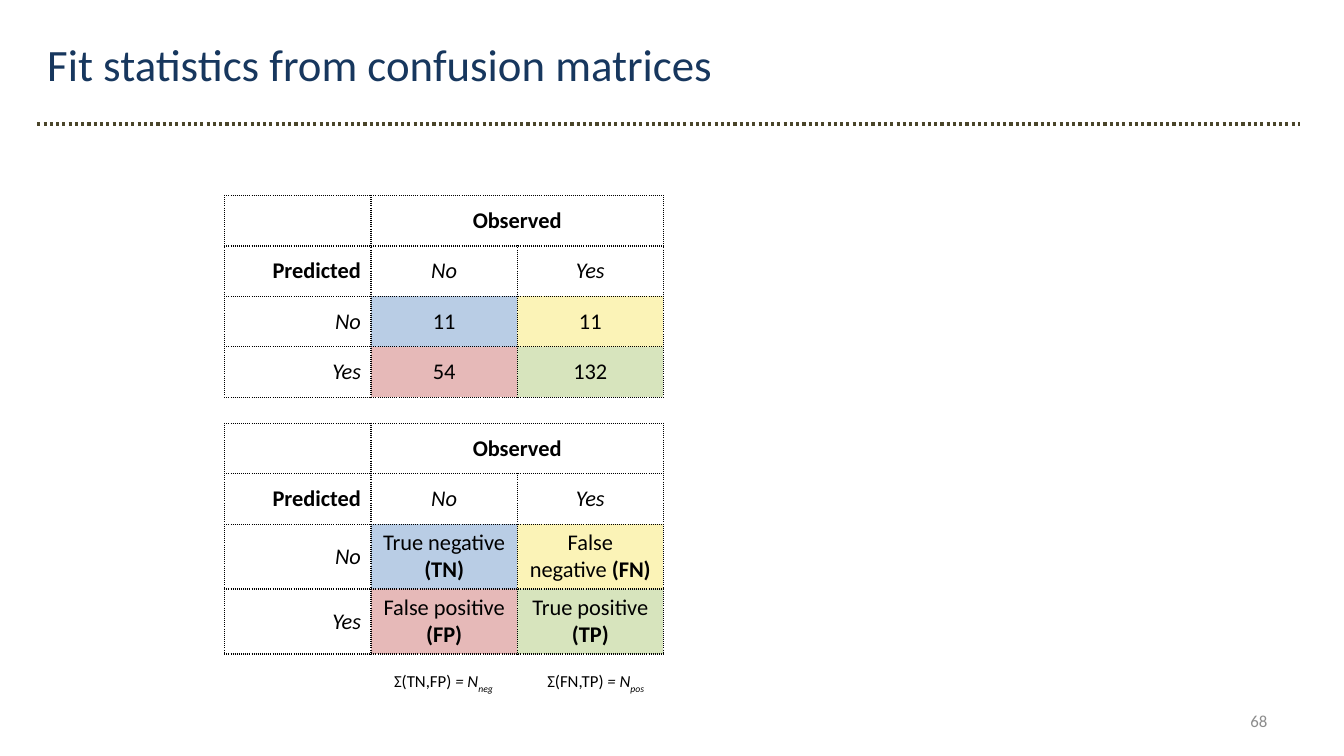
from dataclasses import dataclass

from lxml.etree import SubElement
from pptx import Presentation
from pptx.dml.color import RGBColor
from pptx.enum.dml import MSO_LINE
from pptx.enum.shapes import MSO_CONNECTOR
from pptx.enum.text import MSO_ANCHOR, MSO_AUTO_SIZE, PP_ALIGN
from pptx.oxml.ns import qn
from pptx.util import Pt

PX = 9144  # EMU per px, 100 px to the inch


@dataclass(frozen=True)
class Theme:
    font: str = "Calibri"
    title: str = "17375E"
    rule: str = "4A452A"
    text: str = "000000"
    page: str = "8C8C8C"
    true_negative: str = "B9CDE5"
    false_negative: str = "FBF3B7"
    false_positive: str = "E6B9B8"
    true_positive: str = "D7E4BD"
    title_size: int = 32
    table_size: int = 16
    note_size: int = 12


THEME = Theme()
OUTCOME_FILLS = {
    (2, 1): THEME.true_negative,
    (2, 2): THEME.false_negative,
    (3, 1): THEME.false_positive,
    (3, 2): THEME.true_positive,
}


def px(*lengths):
    return [length * PX for length in lengths]


def write(paragraph, parts, size, color, align=PP_ALIGN.LEFT):
    """Write (text, style) parts; style holds b, i or _ for bold, italic, subscript."""
    paragraph.alignment = align
    paragraph.text = parts[0][0]
    for text, _ in parts[1:]:
        paragraph.add_run().text = text
    for run, (_, style) in zip(paragraph.runs, parts):
        font = run.font
        font.name, font.size = THEME.font, Pt(size)
        font.color.rgb = RGBColor.from_string(color)
        font.bold, font.italic = "b" in style, "i" in style
        if "_" in style:
            run._r.get_or_add_rPr().set("baseline", "-25000")


def add_text(slide, box, parts, size, color, align=PP_ALIGN.LEFT,
             anchor=MSO_ANCHOR.TOP, wrap=True):
    frame = slide.shapes.add_textbox(*px(*box)).text_frame
    frame.word_wrap = wrap
    frame.auto_size = MSO_AUTO_SIZE.NONE
    frame.vertical_anchor = anchor
    write(frame.paragraphs[0], parts, size, color, align)


def add_dotted_rule(slide, left, right, y):
    rule = slide.shapes.add_connector(MSO_CONNECTOR.STRAIGHT, *px(left, y, right, y))
    rule.line.color.rgb = RGBColor.from_string(THEME.rule)
    rule.line.width = Pt(2.25)
    rule.line.dash_style = MSO_LINE.ROUND_DOT
    SubElement(rule._element.spPr, qn("a:effectLst"))


def add_dotted_borders(cell):
    properties = cell._tc.get_or_add_tcPr()
    for side in ("lnL", "lnR", "lnT", "lnB"):
        border = SubElement(properties, qn(f"a:{side}"), w=str(Pt(1)))
        fill = SubElement(border, qn("a:solidFill"))
        SubElement(fill, qn("a:srgbClr"), val=THEME.text)
        SubElement(border, qn("a:prstDash"), val="sysDot")


def add_confusion_matrix(slide, top, outcome_height, outcomes):
    heights = px(50, 50, outcome_height, outcome_height)
    left, top, column_width = px(223, top, 145)
    table = slide.shapes.add_table(
        4, 3, left, top, 3 * column_width, sum(heights)).table
    table.first_row = table.horz_banding = False
    for column in table.columns:
        column.width = column_width
    for row, height in zip(table.rows, heights):
        row.height = height

    contents = [
        [None, [("Observed", "b")], None],
        [[("Predicted", "b")], [("No", "i")], [("Yes", "i")]],
        [[("No", "i")], *outcomes[0]],
        [[("Yes", "i")], *outcomes[1]],
    ]
    for r, row_contents in enumerate(contents):
        for c, parts in enumerate(row_contents):
            cell = table.cell(r, c)
            add_dotted_borders(cell)
            if (r, c) in OUTCOME_FILLS:
                cell.fill.solid()
                cell.fill.fore_color.rgb = RGBColor.from_string(OUTCOME_FILLS[r, c])
            else:
                cell.fill.background()
            cell.vertical_anchor = MSO_ANCHOR.MIDDLE
            if parts:
                align = PP_ALIGN.CENTER if c else PP_ALIGN.RIGHT
                write(cell.text_frame.paragraphs[0], parts,
                      THEME.table_size, THEME.text, align)
    table.cell(0, 1).merge(table.cell(0, 2))


def add_column_sum(slide, left, terms, subscript):
    parts = [(f"Σ({terms}) ", ""), ("= N", "i"), (subscript, "i_")]
    add_text(slide, (left, 661, 120, 30), parts,
             THEME.note_size, THEME.text, wrap=False)


def main():
    presentation = Presentation()
    presentation.slide_width, presentation.slide_height = px(1333, 750)
    slide = presentation.slides.add_slide(presentation.slide_layouts[6])

    add_text(slide, (956, 695, 311, 40), [("68", "")], THEME.note_size,
             THEME.page, PP_ALIGN.RIGHT, MSO_ANCHOR.MIDDLE)
    add_dotted_rule(slide, 37, 1289, 123)
    add_text(slide, (37, 32, 1165, 64), [("Fit statistics from confusion matrices", "")],
             THEME.title_size, THEME.title)

    add_confusion_matrix(slide, 194, 50, [
        [[("11", "")], [("11", "")]],
        [[("54", "")], [("132", "")]],
    ])
    add_confusion_matrix(slide, 420, 64, [
        [[("True negative ", ""), ("(TN)", "b")], [("False negative ", ""), ("(FN)", "b")]],
        [[("False positive ", ""), ("(FP)", "b")], [("True positive ", ""), ("(TP)", "b")]],
    ])
    add_column_sum(slide, 381, "TN,FP", "neg")
    add_column_sum(slide, 533, "FN,TP", "pos")

    presentation.save("out.pptx")


if __name__ == "__main__":
    main()
